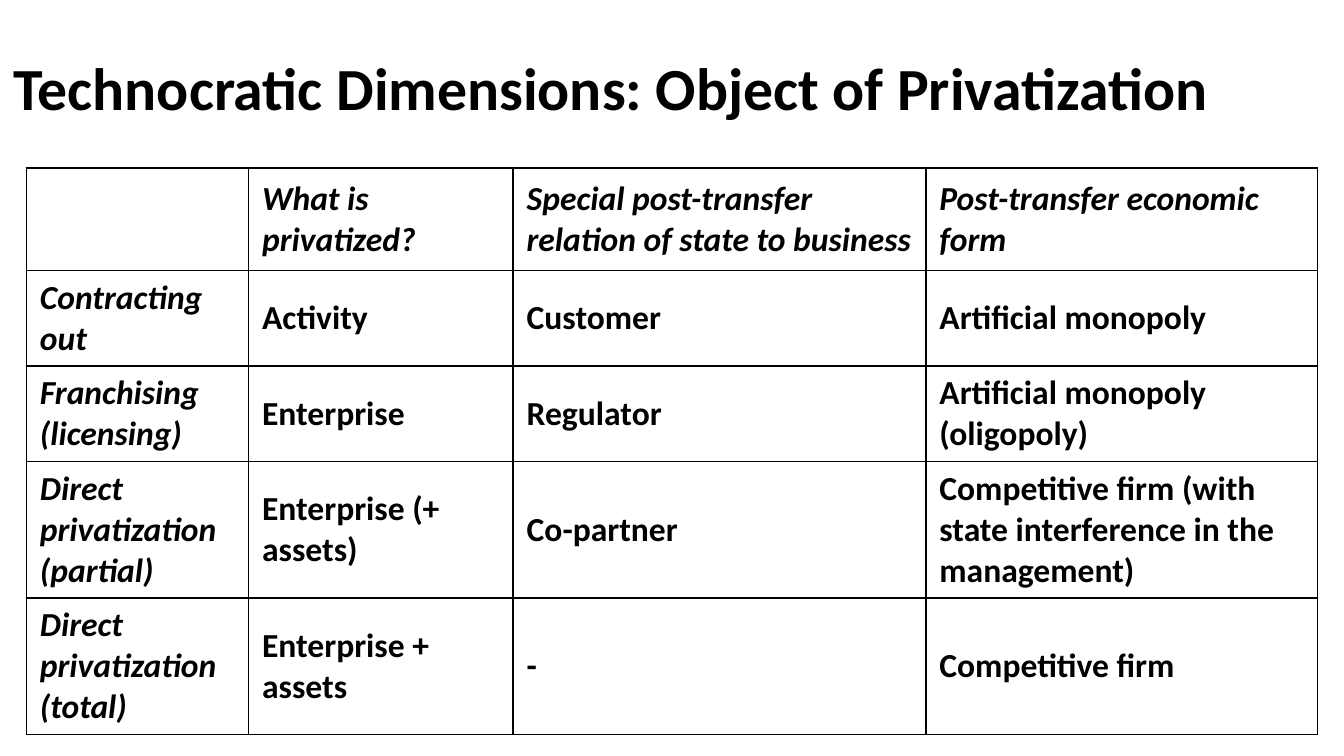
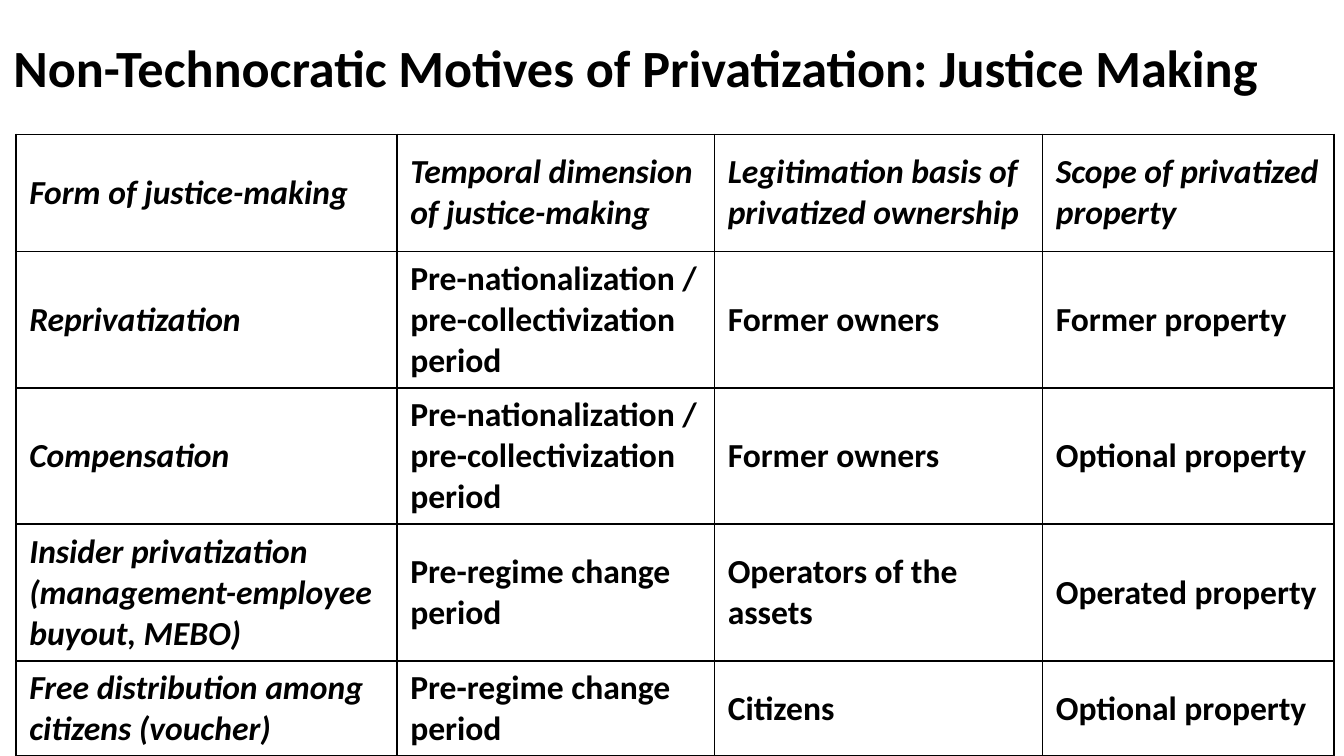
import pptx
import pptx.dml.color
import pptx.enum.text
import pptx.oxml.ns
import pptx.util
from lxml import etree
from pptx.util import Cm

COLOURS = {"text": "000000", "border": "000000", "background": "FFFFFF"}
FONT = "Calibri"


def colour(name):
    return pptx.dml.color.RGBColor.from_string(COLOURS[name])


class Builder:
    """Holds the shared style and the current slide."""

    def __init__(self):
        self.deck = pptx.Presentation()
        self.deck.slide_width = Cm(25.4)
        self.deck.slide_height = Cm(14.29)
        self.slide = None

    def add_slide(self):
        title_only = self.deck.slide_layouts[5]
        self.slide = self.deck.slides.add_slide(title_only)
        fill = self.slide.background.fill
        fill.solid()
        fill.fore_color.rgb = colour("background")

    def add_text(self, frame, text, size, italic=False):
        """Put one bold, left-aligned run into a text frame."""
        para = frame.paragraphs[0]
        para.alignment = pptx.enum.text.PP_ALIGN.LEFT
        span = para.add_run()
        span.text = text
        span.font.name = FONT
        span.font.size = pptx.util.Pt(size)
        span.font.bold = True
        span.font.italic = italic
        span.font.color.rgb = colour("text")

    def add_title(self, text, top, size):
        box = self.slide.shapes.title
        box.left, box.top = Cm(0), Cm(top)
        box.width, box.height = Cm(25.4), Cm(2.62)
        frame = box.text_frame
        frame.word_wrap = True
        frame.auto_size = pptx.enum.text.MSO_AUTO_SIZE.NONE
        frame.vertical_anchor = pptx.enum.text.MSO_ANCHOR.MIDDLE
        self.add_text(frame, text, size)

    def add_borders(self, cell):
        properties = cell._tc.get_or_add_tcPr()
        qn = pptx.oxml.ns.qn
        for side in ("lnL", "lnR", "lnT", "lnB"):
            line = etree.SubElement(properties, qn(f"a:{side}"), w=str(pptx.util.Pt(1)))
            fill = etree.SubElement(line, qn("a:solidFill"))
            etree.SubElement(fill, qn("a:srgbClr"), val=COLOURS["border"])

    def add_table(self, left, top, widths, heights, rows):
        """Add a ruled table with italic headings in its first row and column."""
        table = self.slide.shapes.add_table(
            len(heights), len(widths), Cm(left), Cm(top),
            Cm(sum(widths)), Cm(sum(heights))).table
        table.first_row = table.horz_banding = False
        for column, width in zip(table.columns, widths):
            column.width = Cm(width)
        for row, height in zip(table.rows, heights):
            row.height = Cm(height)
        for r, texts in enumerate(rows):
            for c, text in enumerate(texts):
                cell = table.cell(r, c)
                self.add_borders(cell)
                cell.fill.background()
                cell.vertical_anchor = pptx.enum.text.MSO_ANCHOR.MIDDLE
                if text:
                    self.add_text(cell.text_frame, text, 18, italic=r == 0 or c == 0)


OBJECTS_OF_PRIVATIZATION = [
    ["", "What is privatized?", "Special post-transfer relation of state to business",
     "Post-transfer economic form"],
    ["Contracting out", "Activity", "Customer", "Artificial monopoly"],
    ["Franchising (licensing)", "Enterprise", "Regulator",
     "Artificial monopoly (oligopoly)"],
    ["Direct privatization (partial)", "Enterprise (+ assets)", "Co-partner",
     "Competitive firm (with state interference in the management)"],
    ["Direct privatization (total)", "Enterprise + assets", "-", "Competitive firm"],
]

FORMS_OF_JUSTICE = [
    ["Form of justice-making", "Temporal dimension of justice-making",
     "Legitimation basis of privatized ownership", "Scope of privatized property"],
    ["Reprivatization", "Pre-nationalization / pre-collectivization period",
     "Former owners", "Former property"],
    ["Compensation", "Pre-nationalization / pre-collectivization period",
     "Former owners", "Optional property"],
    ["Insider privatization (management-employee buyout, MEBO)",
     "Pre-regime change period", "Operators of the assets", "Operated property"],
    ["Free distribution among citizens (voucher)", "Pre-regime change period",
     "Citizens", "Optional property"],
]


def main():
    builder = Builder()

    builder.add_slide()
    builder.add_title("Technocratic Dimensions: Object of Privatization", 0.33, 32)
    builder.add_table(0.5, 3.18, [4.2, 5, 7.8, 7.4],
                      [1.93, 1.27, 1.3, 1.75, 1.75], OBJECTS_OF_PRIVATIZATION)

    builder.add_slide()
    builder.add_title("Non-Technocratic Motives of Privatization: Justice Making",
                      -0.05, 28)
    builder.add_table(0.3, 2.54, [7.2, 6, 6.2, 5.51],
                      [2.21, 2.26, 2.11, 1.57, 1.6], FORMS_OF_JUSTICE)

    builder.deck.save("out.pptx")


if __name__ == "__main__":
    main()
